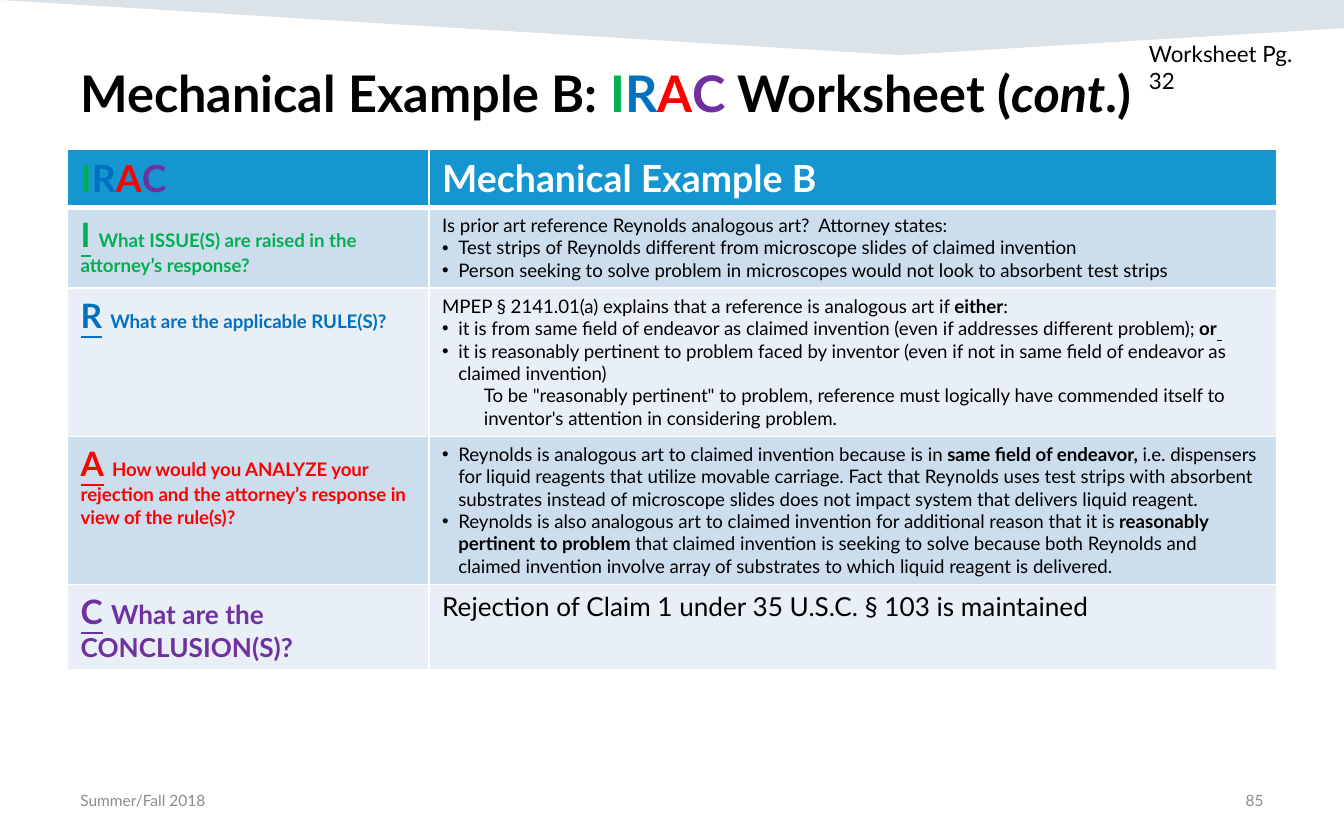
from lxml import etree
from pptx import Presentation
from pptx.dml.color import RGBColor
from pptx.enum.text import MSO_ANCHOR, PP_ALIGN
from pptx.oxml.ns import qn
from pptx.util import Pt

TOP, MID = MSO_ANCHOR.TOP, MSO_ANCHOR.MIDDLE
LEFT, RIGHT = PP_ALIGN.LEFT, PP_ALIGN.RIGHT
FONT = "Lato"
BLACK, WHITE, GRAY = "000000", "FFFFFF", "8C8C8C"
NAVY, BLUE = "164469", "1596D1"
BANDS = ["CCDDEE", "E8EFF7"]
HUES = {"I": "00B050", "R": "0070C0", "A": "FF0000", "C": "7030A0"}

# Content: a run is (text, style, colour); style letters are b, i, u
IRAC = [(key, "b", hue) for key, hue in HUES.items()]
TITLE = [("Mechanical Example B: ", "b", BLACK), *IRAC,
         (" Worksheet (", "b", BLACK), ("cont", "bi", BLACK), (".)", "b", BLACK)]
HEAD = [IRAC, [("Mechanical Example B", "b", WHITE)]]

# Each row: letter, question, size, paragraphs of (kind, runs of (text, style))
ROWS = [
    ("I", "What ISSUE(S) are raised in the attorney’s response?", 10, [
        ("plain", [("Is prior art reference Reynolds analogous art?  Attorney states:", "")]),
        ("bullet", [("Test strips of Reynolds different from microscope slides of "
                     "claimed invention", "")]),
        ("bullet", [("Person seeking to solve problem in microscopes would not look "
                     "to absorbent test strips", "")]),
    ]),
    ("R", "What are the applicable RULE(S)?", 10, [
        ("plain", [("MPEP § 2141.01(a) explains that a reference is analogous art if ", ""),
                   ("either", "b"), (":", "")]),
        ("bullet", [("it is from same field of endeavor as claimed invention "
                     "(even if addresses different problem); ", ""),
                    ("or", "b"), (" ", "u")]),
        ("bullet", [("it is reasonably pertinent to problem faced by inventor (even if "
                     "not in same field of endeavor as claimed invention)", "")]),
        ("inset", [('To be "reasonably pertinent" to problem, reference must logically '
                    "have commended itself to inventor's attention in considering "
                    "problem.", "")]),
    ]),
    ("A", "How would you ANALYZE your rejection and the attorney’s response "
          "in view of the rule(s)?", 10, [
        ("bullet", [("Reynolds is analogous art to claimed invention because is in ", ""),
                    ("same field of endeavor,", "b"),
                    (" i.e. dispensers for liquid reagents that utilize movable carriage. "
                     "Fact that Reynolds uses test strips with absorbent substrates "
                     "instead of microscope slides does not impact system that delivers "
                     "liquid reagent.", "")]),
        ("bullet", [("Reynolds is also analogous art to claimed invention for additional "
                     "reason that it is ", ""),
                    ("reasonably pertinent to problem", "b"),
                    (" that claimed invention is seeking to solve because both Reynolds "
                     "and claimed invention involve array of substrates to which liquid "
                     "reagent is delivered.", "")]),
    ]),
    ("C", "What are the CONCLUSION(S)?", 14, [
        ("plain", [("Rejection of Claim 1 under 35 U.S.C. § 103 is maintained", "")]),
    ]),
]
INDENT = {"plain": (0, 0), "bullet": (8.64, -8.64), "inset": (22.32, 0)}
COLS = [193.7, 454.3]
HIGH = [31.2, 43, 79, 79, 45.6]

# Text boxes: left, top, width, height, anchor, align, size, runs
BOXES = [
    (608.4, 18, 104, 21.6, TOP, LEFT, 12, [("Worksheet Pg. 32", "", BLACK)]),
    (36, 29.5, 648, 49.7, TOP, LEFT, 27, TITLE),
    (516.2, 416.9, 167.8, 23.8, MID, RIGHT, 8.3, [("85", "", GRAY)]),
    (36, 416.9, 167.8, 23.8, MID, LEFT, 8.3, [("Summer/Fall 2018", "", GRAY)]),
]


def rgb(code):
    return RGBColor.from_string(code)


def add_run(para, text, style, hue, size):
    run = para.add_run()
    run.text = text
    font = run.font
    font.name, font.size = FONT, Pt(size)
    font.bold, font.italic, font.underline = ("b" in style, "i" in style, "u" in style)
    font.color.rgb = rgb(hue)


def set_indent(para, kind):
    left, first = INDENT[kind]
    props = para._p.get_or_add_pPr()
    props.set("marL", str(Pt(left)))
    props.set("indent", str(Pt(first)))
    if kind == "bullet":
        etree.SubElement(props, qn("a:buFont")).set("typeface", "Arial")
        etree.SubElement(props, qn("a:buChar")).set("char", "•")


def style_cell(cell, fill, base):
    props = cell._tc.get_or_add_tcPr()
    for side, width in (("L", 1), ("R", 1), ("T", 1), ("B", base)):
        line = etree.SubElement(props, qn("a:ln" + side), w=str(Pt(width)))
        solid = etree.SubElement(line, qn("a:solidFill"))
        etree.SubElement(solid, qn("a:srgbClr"), val=WHITE)
    cell.fill.solid()
    cell.fill.fore_color.rgb = rgb(fill)


deck = Presentation()
deck.slide_width, deck.slide_height = Pt(720), Pt(450)
slide = deck.slides.add_slide(deck.slide_layouts[6])
shapes = slide.shapes

# Pale band along the top edge
pen = shapes.build_freeform(0, 0)
pen.add_line_segments([(Pt(x), Pt(y)) for x, y in
                       [(720, 0), (720, 15.1), (481.7, 29.5)]], close=True)
band = pen.convert_to_shape()
band.shadow.inherit = False
band.line.fill.background()
band.fill.solid()
band.fill.fore_color.rgb = rgb(NAVY)
tint = band._element.spPr.find(".//" + qn("a:srgbClr"))
etree.SubElement(tint, qn("a:alpha"), val="15000")

# Title, page note and footer
for x, y, w, h, anchor, align, size, runs in BOXES:
    frame = shapes.add_textbox(Pt(x), Pt(y), Pt(w), Pt(h)).text_frame
    frame.word_wrap = True
    frame.vertical_anchor = anchor
    para = frame.paragraphs[0]
    para.alignment = align
    for run in runs:
        add_run(para, *run, size)

# Table grid
table = shapes.add_table(len(HIGH), len(COLS), Pt(36), Pt(79.9),
                         Pt(sum(COLS)), Pt(sum(HIGH))).table
for col, width in zip(table.columns, COLS):
    col.width = Pt(width)
for row, height in zip(table.rows, HIGH):
    row.height = Pt(height)

# Header row
for cell, runs in zip(table.rows[0].cells, HEAD):
    style_cell(cell, BLUE, 3)
    for run in runs:
        add_run(cell.text_frame.paragraphs[0], *run, 20)

# Question and answer rows
for num, (key, ask, size, paras) in enumerate(ROWS, 1):
    left, right = table.rows[num].cells
    for cell in (left, right):
        style_cell(cell, BANDS[(num - 1) % 2], 1)
    para = left.text_frame.paragraphs[0]
    for text, style, pts in ((key, "bu", 18), (" ", "b", 18), (ask, "b", size)):
        add_run(para, text, style, HUES[key], pts)
    frame = right.text_frame
    for pos, (kind, runs) in enumerate(paras):
        para = frame.add_paragraph() if pos else frame.paragraphs[0]
        set_indent(para, kind)
        for text, style in runs:
            add_run(para, text, style, BLACK, size)

deck.save("out.pptx")
